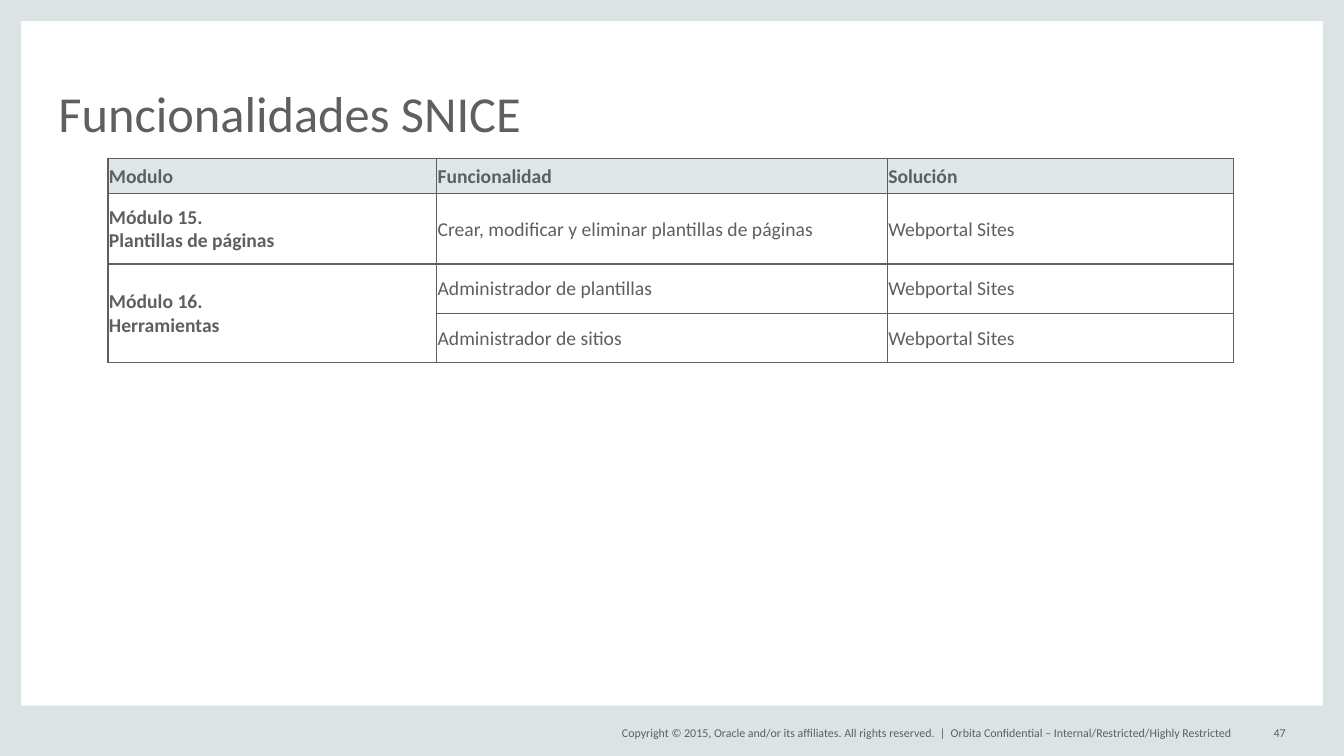
from lxml import etree
from pptx import Presentation
from pptx.dml.color import RGBColor
from pptx.enum.shapes import MSO_SHAPE
from pptx.enum.text import MSO_ANCHOR, PP_ALIGN
from pptx.oxml.ns import qn
from pptx.util import Inches, Pt

RECT = MSO_SHAPE.RECTANGLE
MIDDLE, BOTTOM = MSO_ANCHOR.MIDDLE, MSO_ANCHOR.BOTTOM
LEFT, RIGHT = PP_ALIGN.LEFT, PP_ALIGN.RIGHT
COLORS = {"text": "5F5F5F", "frame": "DCE3E4", "header": "DFE7E9"}
FONT = "Calibri"
SIZES = {"title": 36, "table": 14, "footer": 8.5}
SIDE, TOP, BASE = 1.58, 2.8, 6.67
FOOTER_Y, FOOTER_H = 95.6, 2.67

FRAME = [
    (0, 0, SIDE, 100),
    (100 - SIDE, 0, SIDE, 100),
    (0, 100 - BASE, 100, BASE),
    (0, 0, 100, TOP),
]
FOOTERS = [
    (44.11, 26.26, RIGHT, "Copyright © 2015, Oracle and/or its affiliates. All rights reserved.  |"),
    (70.74, 22.51, LEFT, "Orbita Confidential – Internal/Restricted/Highly Restricted"),
    (92.5, 3.15, RIGHT, "47"),
]
COLUMNS = [24.46, 33.53, 25.77]
ROWS = [4.67, 9.33, 6.53, 6.53]
SOLUTION = "Webportal Sites"
MODULES = [
    ["Modulo", "Funcionalidad", "Solución"],
    ["Módulo 15.\nPlantillas de páginas", "Crear, modificar y eliminar plantillas de páginas", SOLUTION],
    ["Módulo 16.\nHerramientas", "Administrador de plantillas", SOLUTION],
    ["", "Administrador de sitios", SOLUTION],
]
MERGES = [((2, 0), (3, 0))]


class Deck:
    def __init__(self):
        self.prs = Presentation()
        self.prs.slide_width, self.prs.slide_height = Inches(13.33), Inches(7.5)
        self.s = self.prs.slides.add_slide(self.prs.slide_layouts[6])

    def x(self, share):
        return round(self.prs.slide_width * share / 100)

    def y(self, share):
        return round(self.prs.slide_height * share / 100)

    def box(self, left, top, width, height):
        return self.x(left), self.y(top), self.x(width), self.y(height)

    def color(self, name):
        return RGBColor.from_string(COLORS[name])

    def add_lines(self, p, text, size, bold=False):
        for i, line in enumerate(text.split("\n")):
            if i:
                p.add_line_break()
            r = p.add_run()
            r.text = line
            for name, value in {"name": FONT, "size": Pt(size), "bold": bold}.items():
                setattr(r.font, name, value)
            r.font.color.rgb = self.color("text")

    def bar(self, *place):
        sp = self.s.shapes.add_shape(RECT, *self.box(*place))
        sp.shadow.inherit = False
        sp.fill.solid()
        sp.fill.fore_color.rgb = self.color("frame")
        sp.line.fill.background()

    def text(self, place, text, size, align=LEFT, anchor=MIDDLE, spacing=1.0):
        tf = self.s.shapes.add_textbox(*self.box(*place)).text_frame
        frame = {"word_wrap": True, "vertical_anchor": anchor, "margin_left": 0,
                 "margin_right": 0, "margin_top": 0, "margin_bottom": 0}
        for name, value in frame.items():
            setattr(tf, name, value)
        p = tf.paragraphs[0]
        p.alignment, p.line_spacing = align, spacing
        self.add_lines(p, text, size)

    def borders(self, cell):
        tcPr = cell._tc.get_or_add_tcPr()
        for i, side in enumerate(("lnL", "lnR", "lnT", "lnB")):
            ln = etree.Element(qn("a:" + side), w=str(Pt(1)))
            fill = etree.SubElement(ln, qn("a:solidFill"))
            etree.SubElement(fill, qn("a:srgbClr"), val=COLORS["text"])
            tcPr.insert(i, ln)

    def cell(self, cell, text, header, bold):
        inset = Inches(0.01)
        layout = {"vertical_anchor": MIDDLE, "margin_left": inset, "margin_right": inset,
                  "margin_top": inset, "margin_bottom": 0}
        for name, value in layout.items():
            setattr(cell, name, value)
        if header:
            cell.fill.solid()
            cell.fill.fore_color.rgb = self.color("header")
        else:
            cell.fill.background()
        self.borders(cell)
        if text:
            self.add_lines(cell.text_frame.paragraphs[0], text, SIZES["table"], bold)

    def table(self, left, top, columns, rows, values, merges):
        place = self.box(left, top, sum(columns), sum(rows))
        table = self.s.shapes.add_table(len(rows), len(columns), *place).table
        table.horz_banding = False
        for column, width in zip(table.columns, columns):
            column.width = self.x(width)
        for row, height in zip(table.rows, rows):
            row.height = self.y(height)
        for first, last in merges:
            table.cell(*first).merge(table.cell(*last))
        for i, line in enumerate(values):
            for j, text in enumerate(line):
                self.cell(table.cell(i, j), text, i == 0, i == 0 or j == 0)


def main():
    deck = Deck()
    for place in FRAME:
        deck.bar(*place)
    deck.text((4.35, 5.87, 91.3, 12.93), "Funcionalidades SNICE", SIZES["title"],
              anchor=BOTTOM, spacing=0.8)
    for left, width, align, text in FOOTERS:
        deck.text((left, FOOTER_Y, width, FOOTER_H), text, SIZES["footer"], align)
    deck.table(8.03, 20.93, COLUMNS, ROWS, MODULES, MERGES)
    deck.prs.save("out.pptx")


if __name__ == "__main__":
    main()
